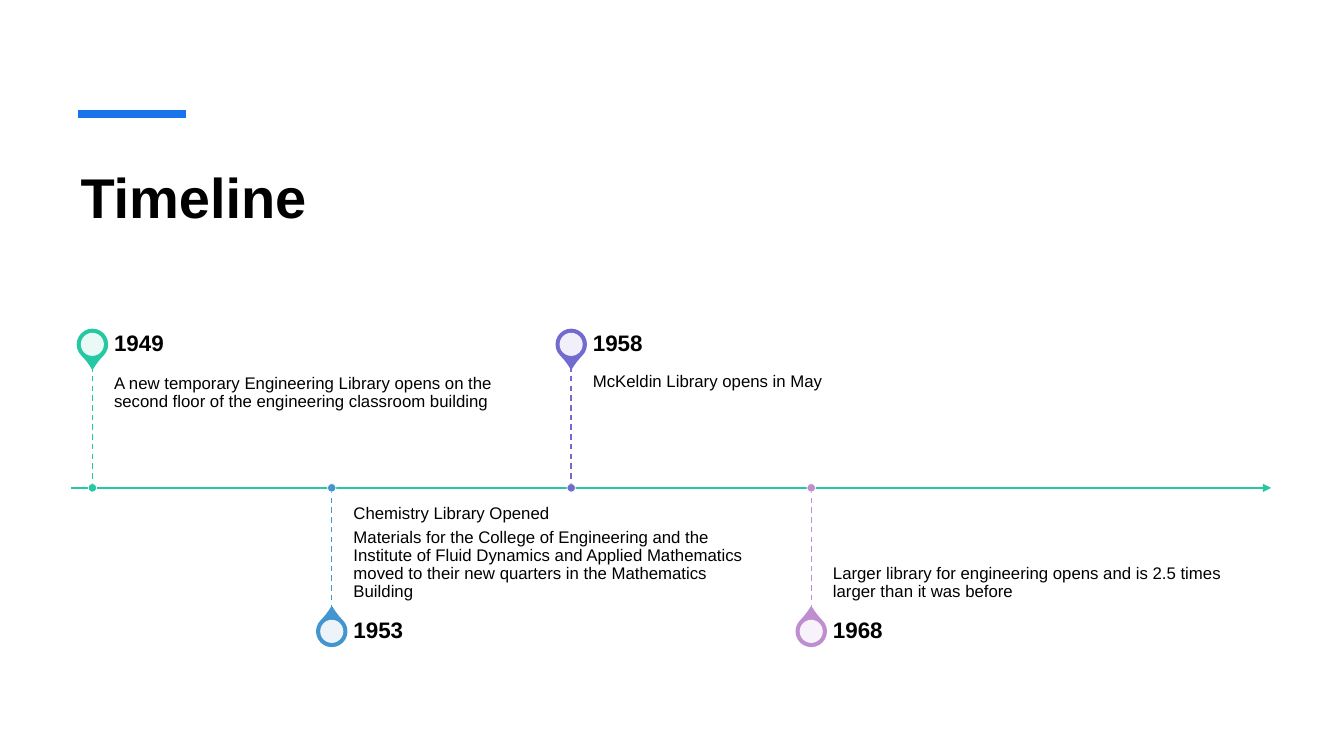
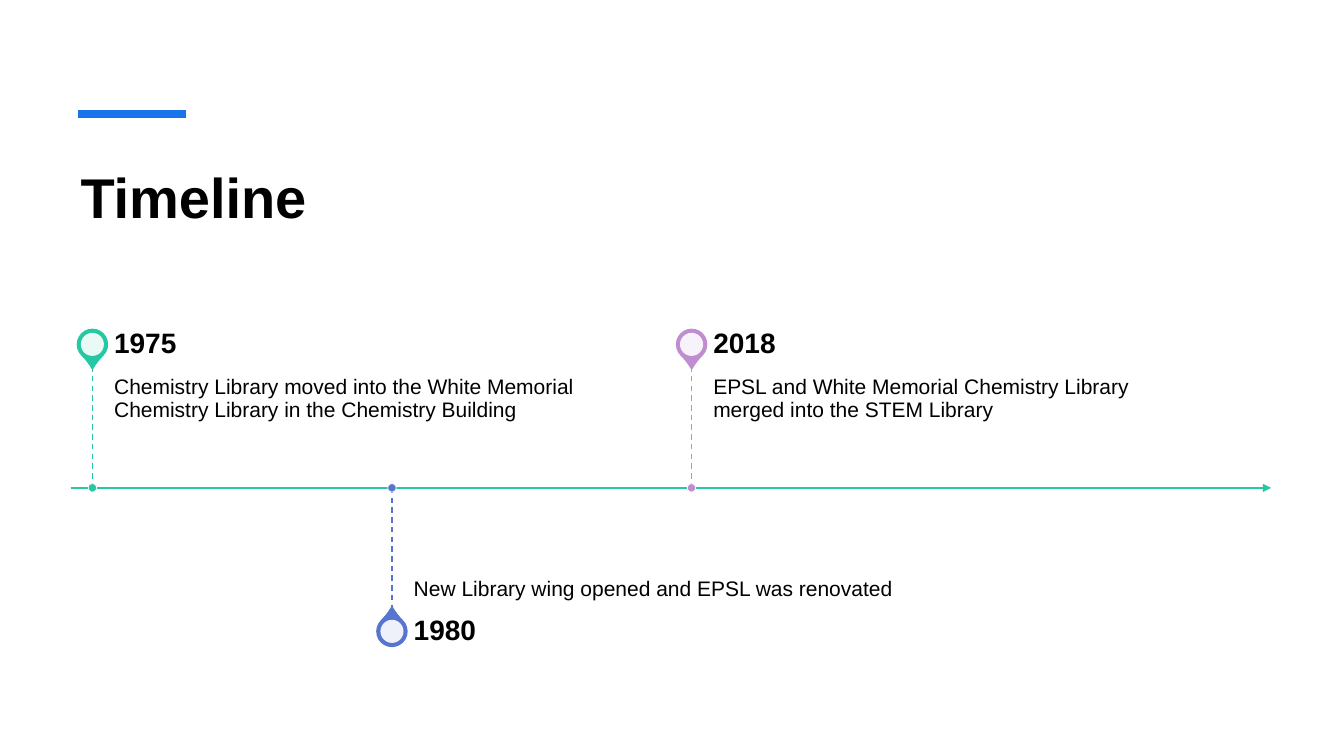
"""Build two timeline slides about the history of the campus libraries."""
from dataclasses import dataclass

from lxml import etree
from pptx import Presentation
from pptx.dml.color import RGBColor
from pptx.enum.dml import MSO_LINE
from pptx.enum.shapes import MSO_CONNECTOR, MSO_SHAPE
from pptx.enum.text import MSO_ANCHOR
from pptx.oxml.ns import qn
from pptx.util import Emu, Pt

DASH = MSO_LINE.DASH
STRAIGHT = MSO_CONNECTOR.STRAIGHT
ELLIPSE, TEARDROP = MSO_SHAPE.OVAL, MSO_SHAPE.TEAR
TOP, MIDDLE, BOTTOM = MSO_ANCHOR.TOP, MSO_ANCHOR.MIDDLE, MSO_ANCHOR.BOTTOM

EMU_PER_PX = 6350
WIDTH, HEIGHT = 1920, 1080
LEFT, RIGHT = 101, 1816
AXIS_Y, FIRST_X, SPAN = 697, 132, 1711
STEM, YEAR_H, PIN_REACH, TEXT_GAP = 174, 62, 205, 31
RING, DISC, DOT = 43, 33, 12


@dataclass(frozen=True)
class Theme:
    font: str = "Arial"
    text: str = "000000"
    white: str = "FFFFFF"
    accent: str = "1973EB"
    green: str = "25C8A2"
    blue: str = "4395D0"
    indigo: str = "5775CF"
    violet: str = "726ACF"
    mauve: str = "BF8ED1"
    title_size: int = 40


THEME = Theme()

SLIDES = [
    (12, 16, [
        ("1949", THEME.green, ["A new temporary Engineering Library opens on the "
                               "second floor of the engineering classroom building"]),
        ("1953", THEME.blue, ["Chemistry Library Opened",
                              "Materials for the College of Engineering and the "
                              "Institute of Fluid Dynamics and Applied Mathematics "
                              "moved to their new quarters in the Mathematics Building"]),
        ("1958", THEME.violet, ["McKeldin Library opens in May"]),
        ("1968", THEME.mauve, ["Larger library for engineering opens and is 2.5 times "
                               "larger than it was before"]),
    ]),
    (15, 20, [
        ("1975", THEME.green, ["Chemistry Library moved into the White Memorial "
                               "Chemistry Library in the Chemistry Building"]),
        ("1980", THEME.indigo, ["New Library wing opened and EPSL was renovated"]),
        ("2018", THEME.mauve, ["EPSL and White Memorial Chemistry Library merged "
                               "into the STEM Library"]),
    ]),
]


def px(n):
    return Emu(n * EMU_PER_PX)


def rgb(color):
    return RGBColor.from_string(color)


class Deck:
    def __init__(self, theme):
        self.theme = theme
        self.prs = Presentation()
        self.prs.slide_width, self.prs.slide_height = px(WIDTH), px(HEIGHT)
        self.s = None

    def new_slide(self, title):
        t = self.theme
        self.s = self.prs.slides.add_slide(self.prs.slide_layouts[6])
        self.text([title], (LEFT, 216, RIGHT - LEFT, 173), t.title_size,
                  bold=True, insets=(14, 16, 14, 7), spacing=1.0)
        self.line((112, 163), (266, 163), t.accent, 6)

    def text(self, paragraphs, box, size, bold=False, anchor=TOP,
             insets=(0, 0, 0, 0), spacing=0.9):
        tf = self.s.shapes.add_textbox(*map(px, box)).text_frame
        tf.word_wrap = True
        tf.vertical_anchor = anchor
        (tf.margin_left, tf.margin_top,
         tf.margin_right, tf.margin_bottom) = map(px, insets)
        for i, content in enumerate(paragraphs):
            p = tf.add_paragraph() if i else tf.paragraphs[0]
            p.line_spacing = spacing
            p.space_after = Pt(round(size * 0.35, 1))
            r = p.add_run()
            r.text = content
            r.font.name, r.font.size, r.font.bold = self.theme.font, Pt(size), bold
            r.font.color.rgb = rgb(self.theme.text)

    def line(self, start, end, color, width, dash=None, arrow=False):
        sp = self.s.shapes.add_connector(STRAIGHT, *map(px, start + end))
        sp.line.color.rgb = rgb(color)
        sp.line.width = Pt(width)
        if dash:
            sp.line.dash_style = dash
        sp_pr = sp.element.spPr
        if arrow:
            etree.SubElement(sp_pr.find(qn("a:ln")), qn("a:tailEnd"), type="triangle")
        etree.SubElement(sp_pr, qn("a:effectLst"))

    def marker(self, kind, x, y, size, fill, outline=None, width=1, alpha=None):
        half = px(size) // 2
        sp = self.s.shapes.add_shape(kind, px(x) - half, px(y) - half, px(size), px(size))
        sp.shadow.inherit = False
        sp.fill.solid()
        sp.fill.fore_color.rgb = rgb(fill)
        if alpha:
            color = sp.element.spPr.find(qn("a:solidFill")).find(qn("a:srgbClr"))
            etree.SubElement(color, qn("a:alpha"), val=str(alpha * 1000))
        if outline:
            sp.line.color.rgb = rgb(outline)
            sp.line.width = Pt(width)
        else:
            sp.line.fill.background()
        return sp

    def event(self, x, width, above, event, body_size, year_size):
        year, color, notes = event
        side = -1 if above else 1
        stem_end = AXIS_Y + side * STEM
        pin_y = AXIS_Y + side * PIN_REACH
        near, far = body_size, body_size * 3 // 2

        pin = self.marker(TEARDROP, x, pin_y, RING, color, color)
        pin.adjustments[0] = 1.15
        pin.rotation = 135 if above else 315
        self.marker(ELLIPSE, x, pin_y, DISC, self.theme.white, alpha=90)

        self.text(notes, (x + TEXT_GAP, min(AXIS_Y, stem_end), width, STEM), body_size,
                  anchor=TOP if above else BOTTOM,
                  insets=(0, near, near, far) if above else (0, far, 0, near))
        year_y = stem_end - YEAR_H if above else stem_end
        self.text([year], (x + TEXT_GAP, year_y, width, YEAR_H), year_size,
                  bold=True, anchor=MIDDLE, insets=(0, 0, year_size, 0))

        self.line((x, min(AXIS_Y, stem_end)), (x, max(AXIS_Y, stem_end)), color, 1, DASH)
        self.marker(ELLIPSE, x, AXIS_Y, DOT, color, self.theme.white, 0.5)

    def timeline(self, events, body_size, year_size):
        self.line((LEFT, AXIS_Y), (RIGHT, AXIS_Y), self.theme.green, 1.5, arrow=True)
        step = SPAN / (len(events) + 1)
        for i, event in enumerate(events):
            self.event(FIRST_X + round(i * step), round(step * 5 / 3), i % 2 == 0,
                       event, body_size, year_size)


def main():
    deck = Deck(THEME)
    for body_size, year_size, events in SLIDES:
        deck.new_slide("Timeline")
        deck.timeline(events, body_size, year_size)
    deck.prs.save("out.pptx")


if __name__ == "__main__":
    main()
